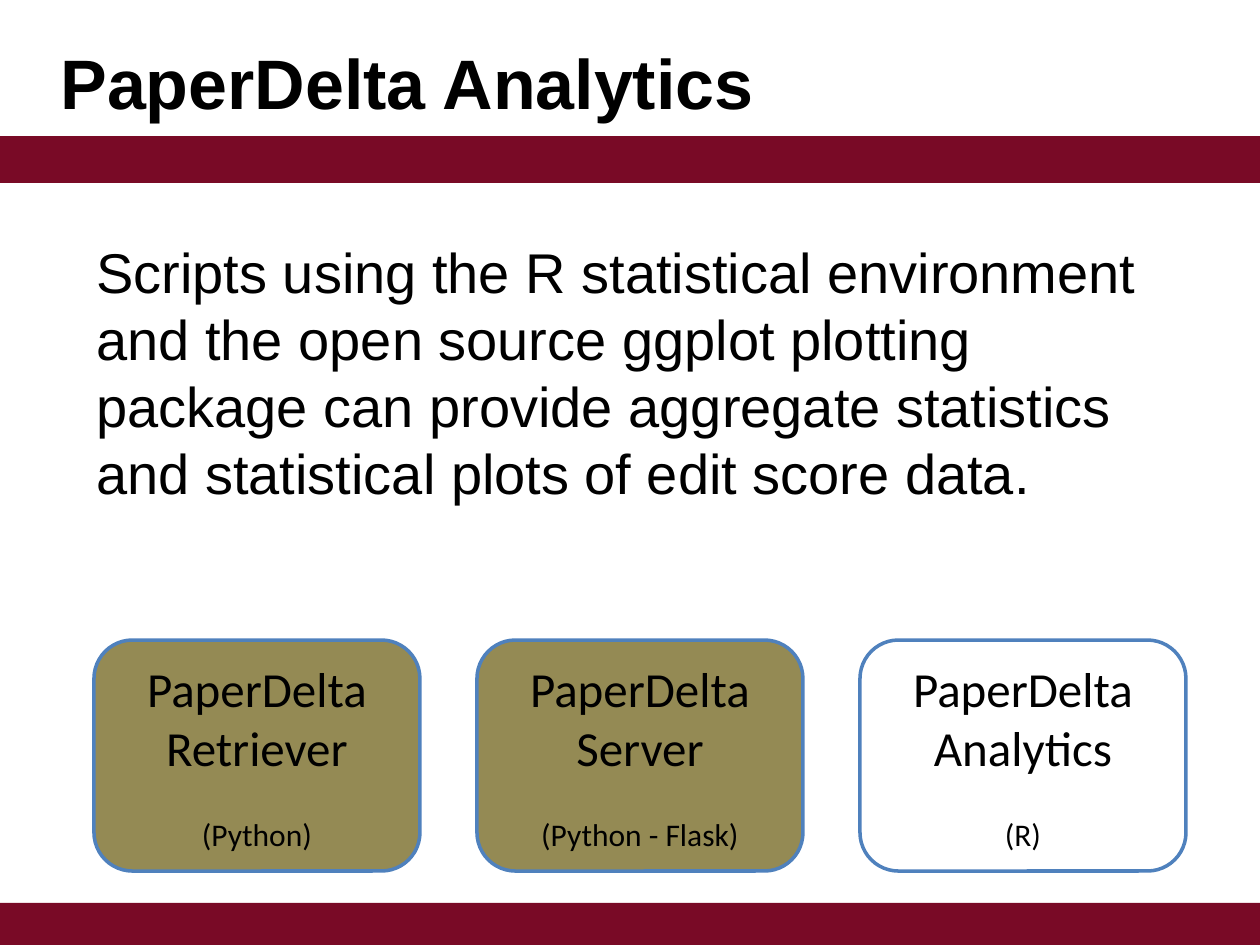
from pptx import Presentation
from pptx.dml.color import RGBColor
from pptx.enum.shapes import MSO_SHAPE as Shape
from pptx.enum.text import MSO_ANCHOR as Anchor, PP_ALIGN as Align
from pptx.util import Emu, Pt

PX_PER_INCH = 126
MAROON = RGBColor(0x79, 0x0A, 0x26)
OLIVE = RGBColor(0x94, 0x8A, 0x54)
BLUE = RGBColor(0x4F, 0x81, 0xBD)
BLACK = RGBColor(0, 0, 0)

TOOL = "PaperDelta"
TITLE = f"{TOOL} Analytics"
SUMMARY = (
    "Scripts using the R statistical environment and the open source "
    "ggplot plotting package can provide aggregate statistics and "
    "statistical plots of edit score data."
)
COMPONENTS = [
    ("Retriever", "(Python)", OLIVE),
    ("Server", "(Python - Flask)", OLIVE),
    ("Analytics", "(R)", None),
]
TITLE_FONT = {"name": "Arial", "size": Pt(40), "bold": True}
SUMMARY_FONT = {"name": "Arial", "size": Pt(32)}
NAME_FONT = {"name": "Calibri", "size": Pt(28)}
LANGUAGE_FONT = {"name": "Calibri", "size": Pt(18)}


def px(*lengths):
    """Turn pixel lengths into EMU."""
    return [Emu(round(length * 914400 / PX_PER_INCH)) for length in lengths]


def write(paragraph, text, font):
    """Put one formatted run of black text into a paragraph."""
    run = paragraph.add_run()
    run.text = text
    for attribute, value in font.items():
        setattr(run.font, attribute, value)
    run.font.color.rgb = BLACK


def add_band(slide, left, top, width, height):
    """Draw a plain maroon band."""
    band = slide.shapes.add_shape(Shape.RECTANGLE, *px(left, top, width, height))
    band.shadow.inherit = False
    band.fill.solid()
    band.fill.fore_color.rgb = MAROON
    band.line.fill.background()


def add_text(slide, box, text, font, anchor):
    """Place a wrapped paragraph in its box."""
    frame = slide.shapes.add_textbox(*px(*box)).text_frame
    frame.word_wrap = True
    frame.vertical_anchor = anchor
    write(frame.paragraphs[0], text, font)


def add_component(slide, left, top, width, height, part, language, fill):
    """Draw one rounded component with its name and language."""
    component = slide.shapes.add_shape(
        Shape.ROUNDED_RECTANGLE, *px(left, top, width, height)
    )
    component.shadow.inherit = False
    if fill is None:
        component.fill.background()
    else:
        component.fill.solid()
        component.fill.fore_color.rgb = fill
    component.line.color.rgb = BLUE
    component.line.width = Pt(2)
    frame = component.text_frame
    frame.word_wrap = True
    frame.vertical_anchor = Anchor.MIDDLE
    lines = [(TOOL, NAME_FONT), (part, NAME_FONT), (language, LANGUAGE_FONT)]
    for index, (text, font) in enumerate(lines):
        paragraph = frame.add_paragraph() if index else frame.paragraphs[0]
        paragraph.alignment = Align.CENTER
        write(paragraph, text, font)
    paragraph.space_before = Pt(22)


def add_components(slide, left, top, width, height, gap):
    """Lay out the components in a row of equal boxes."""
    box_width = (width - gap * (len(COMPONENTS) - 1)) // len(COMPONENTS)
    for index, component in enumerate(COMPONENTS):
        box_left = left + index * (box_width + gap)
        add_component(slide, box_left, top, box_width, height, *component)


def main():
    """Build and save the slide."""
    deck = Presentation()
    deck.slide_width, deck.slide_height = px(1260, 945)
    slide = deck.slides.add_slide(deck.slide_layouts[6])
    for top in (136, 903):
        add_band(slide, 0, top, 1260, 47)
    add_text(slide, (84, 231, 1103, 494), SUMMARY, SUMMARY_FONT, Anchor.TOP)
    add_text(slide, (48, 3, 1176, 158), TITLE, TITLE_FONT, Anchor.MIDDLE)
    add_components(slide, 94, 640, 1093, 231, 57)
    deck.save("out.pptx")


if __name__ == "__main__":
    main()
